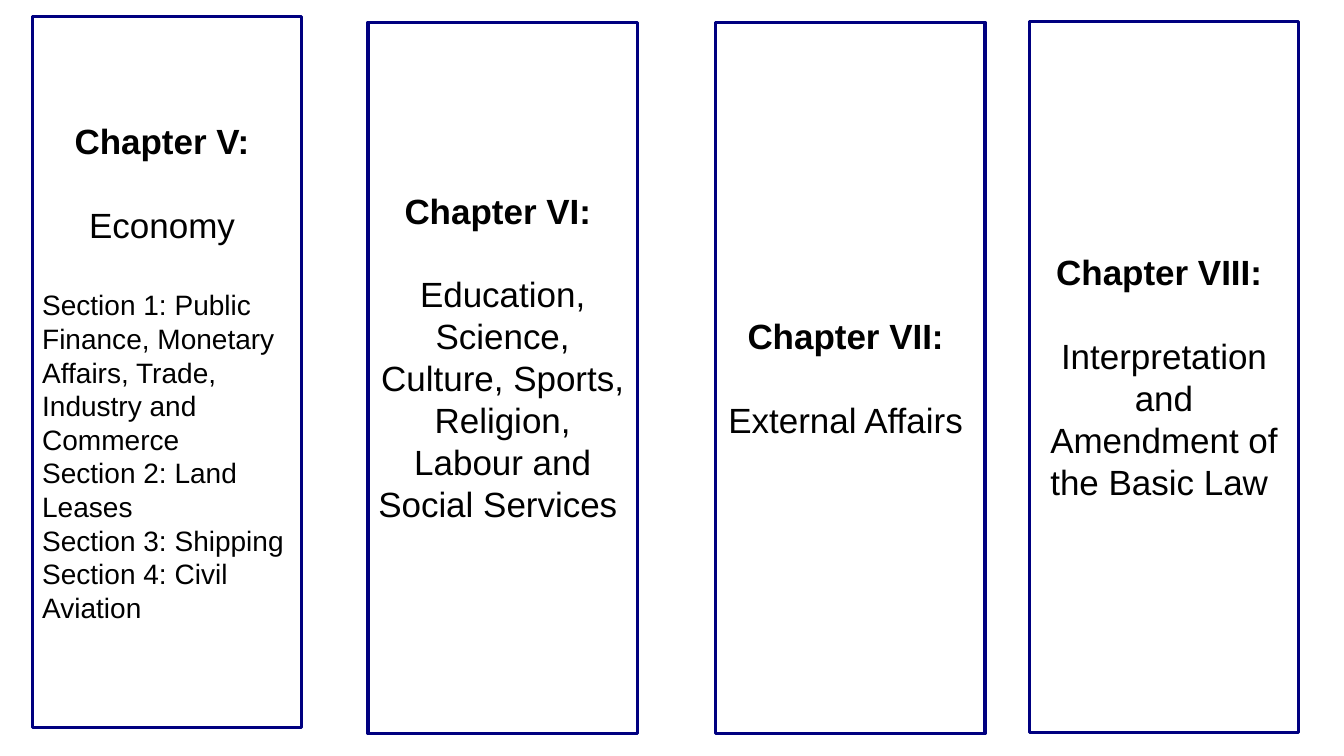
import pptx
import pptx.dml.color
import pptx.enum.shapes
import pptx.enum.text
import pptx.util

Inches = pptx.util.Inches
Pt = pptx.util.Pt
ALIGN = pptx.enum.text.PP_ALIGN

PANEL_WIDTH, PANEL_HEIGHT = 2.67, 7.06
INSET = 0.1
LINE_FACTOR = 1.2
CHAPTER_SIZE, SECTION_SIZE = 25, 20
GAP = CHAPTER_SIZE * LINE_FACTOR

SECTIONS = [
    "Section 1: Public Finance, Monetary Affairs, Trade, Industry and Commerce",
    "Section 2: Land Leases",
    "Section 3: Shipping",
    "Section 4: Civil Aviation",
]
# left, top, chapter, subject, sections, bottom inset
CHAPTERS = [
    (0.32, 0.16, "Chapter V: ", "Economy ", SECTIONS, INSET),
    (3.65, 0.22, "Chapter VI: ",
     "Education, Science, Culture, Sports, Religion, Labour and Social Services ",
     [], INSET + GAP / 72),
    (7.1, 0.22, "Chapter VII: ", "External Affairs ", [], INSET),
    (10.21, 0.21, "Chapter VIII: ",
     "Interpretation and Amendment of the Basic Law ", [], INSET),
]


def color(hex_value):
    return pptx.dml.color.RGBColor.from_string(hex_value)


def set_attributes(target, values):
    for name, value in values.items():
        setattr(target, name, value)


def add_panel(slide, left, top, bottom_inset):
    """Add an outlined, unfilled rectangle and return its text frame."""
    shape = slide.shapes.add_shape(
        pptx.enum.shapes.MSO_SHAPE.RECTANGLE,
        Inches(left), Inches(top), Inches(PANEL_WIDTH), Inches(PANEL_HEIGHT))
    shape.shadow.inherit = False
    shape.fill.background()
    shape.line.color.rgb = color("000080")
    shape.line.width = Pt(2.25)
    set_attributes(shape.text_frame, {
        "word_wrap": True,
        "vertical_anchor": pptx.enum.text.MSO_ANCHOR.MIDDLE,
        "margin_left": Inches(INSET),
        "margin_right": Inches(INSET),
        "margin_top": Inches(INSET),
        "margin_bottom": Inches(bottom_inset),
    })
    return shape.text_frame


def write_paragraph(paragraph, text, size, alignment, bold=False, before=0):
    set_attributes(paragraph, {
        "alignment": alignment,
        "line_spacing": Pt(size * LINE_FACTOR),
        "space_before": Pt(before),
    })
    run = paragraph.add_run()
    run.text = text
    set_attributes(run.font, {"name": "Arial", "size": Pt(size), "bold": bold})
    run.font.color.rgb = color("000000")


def add_chapter(slide, left, top, chapter, subject, sections, bottom_inset):
    frame = add_panel(slide, left, top, bottom_inset)
    write_paragraph(frame.paragraphs[0], chapter, CHAPTER_SIZE, ALIGN.CENTER,
                    bold=True)
    write_paragraph(frame.add_paragraph(), subject, CHAPTER_SIZE, ALIGN.CENTER,
                    before=GAP)
    for index, section in enumerate(sections):
        write_paragraph(frame.add_paragraph(), section, SECTION_SIZE, ALIGN.LEFT,
                        before=0 if index else GAP)


def main():
    presentation = pptx.Presentation()
    presentation.slide_width = Inches(13.33)
    presentation.slide_height = Inches(7.5)
    slide = presentation.slides.add_slide(presentation.slide_layouts[6])
    for chapter in CHAPTERS:
        add_chapter(slide, *chapter)
    presentation.save("out.pptx")


if __name__ == "__main__":
    main()
